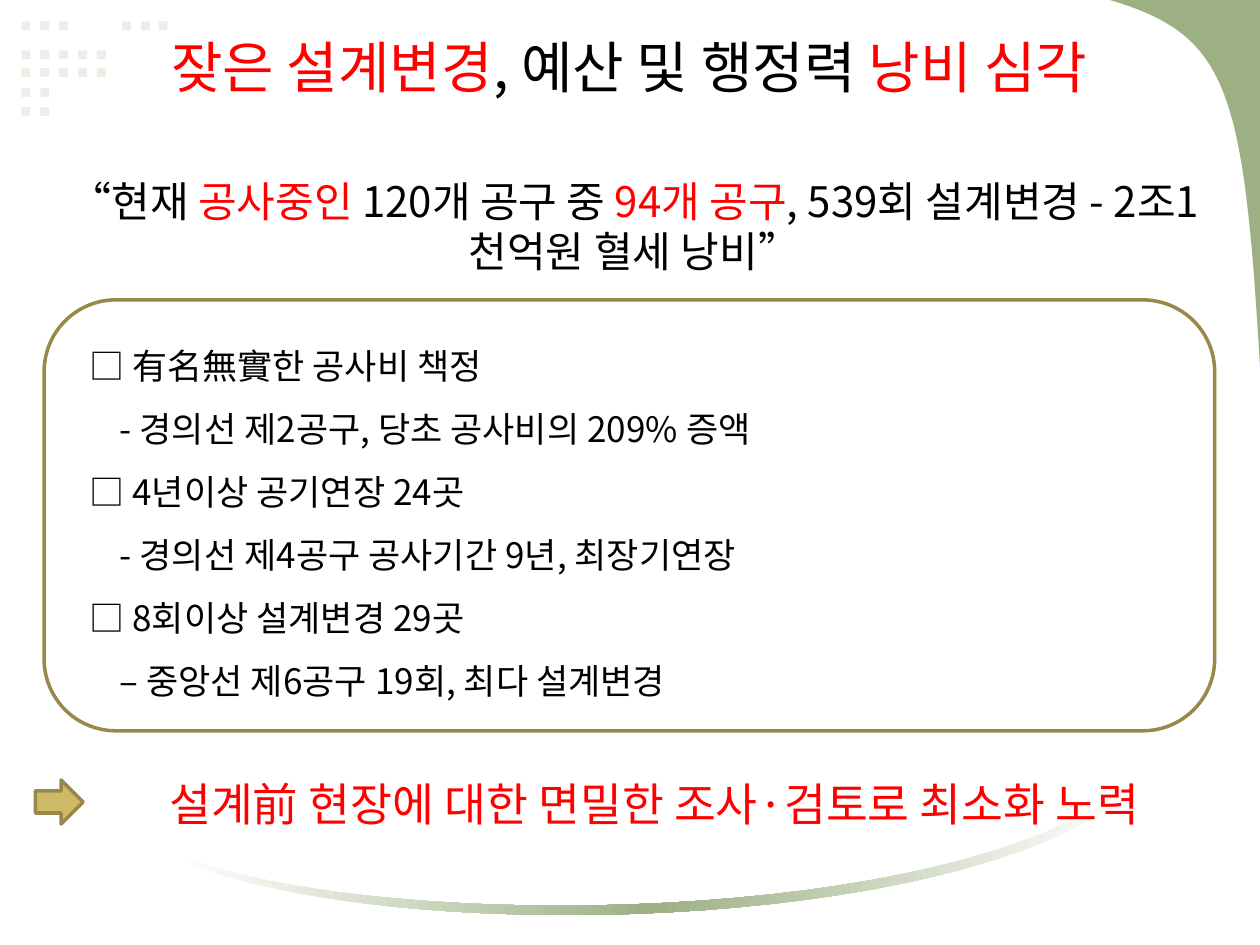
from copy import deepcopy

from lxml.etree import SubElement
from pptx import Presentation
from pptx.dml.color import RGBColor
from pptx.enum.shapes import MSO_SHAPE as Preset
from pptx.enum.text import MSO_ANCHOR as Anchor, MSO_AUTO_SIZE as AutoSize, PP_ALIGN as Align
from pptx.oxml.ns import qn
from pptx.util import Inches, Pt

FONT = "Noto Sans CJK KR"
BLACK, RED, WHITE = "000000", "FF0000", "FFFFFF"
GREEN, PALE, GOLD, BRONZE = "9CB084", "EBEFE6", "CEB966", "98894B"
COLUMNS, ROWS = 100, 75
CELL = Inches(0.1)
CURVE_STEPS = 32
DOT_COLUMNS = (1.7, 3.2, 4.7, 6.2, 7.7, 9.7, 11.2, 12.6)
DOT_ROWS = {1.7: (0, 1, 2, 5, 6, 7), 4: range(5), 5.4: range(5), 7: range(2), 8.5: range(2)}
TITLE = [("잦은 설계변경", RED), (", 예산 및 행정력 ", BLACK), ("낭비 심각", RED)]
QUOTE = [("“현재 ", BLACK), ("공사중인 ", RED), ("120개 공구 중 ", BLACK),
         ("94개 공구", RED), (", 539회 설계변경 - 2조1천억원 혈세 낭비”", BLACK)]
FINDINGS = [
    ("□ 有名無實한 공사비 책정", "- 경의선 제2공구, 당초 공사비의 209% 증액"),
    ("□ 4년이상 공기연장 24곳", "- 경의선 제4공구 공사기간 9년, 최장기연장"),
    ("□ 8회이상 설계변경 29곳", "– 중앙선 제6공구 19회, 최다 설계변경"),
]
CONCLUSION = [("설계前 현장에 대한 면밀한 조사·검토로 최소화 노력", RED)]


def cells(*values):
    """Convert grid cells to slide lengths."""
    return [round(value * CELL) for value in values]


def color(value):
    """Turn a hex string into a colour."""
    return RGBColor.from_string(value)


def apply(target, formats):
    """Set each named attribute on the target."""
    for name, value in formats.items():
        setattr(target, name, value)


def paint(shape, fill=None, line=None):
    """Give a shape a flat fill and outline without a shadow."""
    shape.shadow.inherit = False
    if fill:
        shape.fill.solid()
        shape.fill.fore_color.rgb = color(fill)
    else:
        shape.fill.background()
    if line:
        shape.line.color.rgb = color(line)
        shape.line.width = Pt(2)
    else:
        shape.line.fill.background()


def add_preset(slide, preset, place, fill=None, line=None):
    """Add a painted preset shape."""
    paint(slide.shapes.add_shape(preset, *cells(*place)), fill, line)


def curve(*controls):
    """Sample a cubic curve through its four control points."""
    def point(t):
        weights = ((1 - t) ** 3, 3 * t * (1 - t) ** 2, 3 * t ** 2 * (1 - t), t ** 3)
        return [sum(w * value for w, value in zip(weights, axis)) for axis in zip(*controls)]
    return [point(step / CURVE_STEPS) for step in range(CURVE_STEPS + 1)]


def add_outline(slide, points):
    """Add a closed green freeform."""
    start, *rest = [cells(*point) for point in points]
    builder = slide.shapes.build_freeform(*start)
    builder.add_line_segments(rest, close=True)
    shape = builder.convert_to_shape()
    paint(shape, GREEN)
    return shape


def fade_ends(shape):
    """Fade a shape's fill to white on the left and right."""
    shape.fill.gradient()
    shape.fill.gradient_angle = 0
    stop_list = shape._element.spPr.find(f".//{qn('a:gsLst')}")
    stop_list.append(deepcopy(stop_list[0]))
    for stop, (position, value) in zip(shape.fill.gradient_stops, ((0, WHITE), (0.5, GREEN), (1, WHITE))):
        stop.position = position
        stop.color.rgb = color(value)


def add_decoration(slide):
    """Draw the dots, the corner and the arc of the background."""
    for top, columns in DOT_ROWS.items():
        for column in columns:
            add_preset(slide, Preset.RECTANGLE, (DOT_COLUMNS[column], top, 0.7, 0.7), PALE)
    corner = curve((88.1, 0), (97.5, 2.8), (98.7, 7), (COLUMNS, 29.1))
    add_outline(slide, [*corner, (COLUMNS, 0)])
    lower = curve((89.2, 63.2), (76, 74), (30.7, 75.3), (14.2, 68.2))
    upper = curve((89.2, 62.5), (76, 73.3), (30.7, 74.3), (14.2, 67.9))
    fade_ends(add_outline(slide, lower + upper[::-1]))


def prepare_frame(shape, place):
    """Move a text shape and return its wrapped frame."""
    apply(shape, dict(zip(("left", "top", "width", "height"), cells(*place))))
    frame = shape.text_frame
    apply(frame, {"word_wrap": True, "auto_size": AutoSize.NONE, "vertical_anchor": Anchor.TOP})
    return frame


def write(paragraph, parts, size, **formats):
    """Write coloured runs into a paragraph."""
    apply(paragraph, {"space_before": Pt(0), **formats})
    for text, value in parts:
        run = paragraph.add_run()
        run.text = text
        apply(run.font, {"name": FONT, "size": Pt(size)})
        run.font.color.rgb = color(value)
        SubElement(run.font._element, qn("a:ea"), typeface=FONT)


def add_line(slide, place, parts, size):
    """Add a centred text box."""
    frame = prepare_frame(slide.shapes.add_textbox(0, 0, CELL, CELL), place)
    write(frame.paragraphs[0], parts, size, alignment=Align.CENTER)


def fill_findings(body):
    """Write the findings, each with its indented detail."""
    frame = prepare_frame(body, (6.1, 25.2, 86.5, 31.3))
    for index, text in enumerate(text for pair in FINDINGS for text in pair):
        paragraph = frame.add_paragraph() if index else frame.paragraphs[0]
        write(paragraph, [(text, BLACK)], 20, line_spacing=1.5, alignment=Align.LEFT)
        properties = paragraph._p.get_or_add_pPr()
        properties.set("marL", str(cells(2.4 * (index % 2))[0]))
        properties.set("indent", "0")
        SubElement(properties, qn("a:buNone"))


def main():
    """Build and save the slide."""
    presentation = Presentation()
    apply(presentation, {"slide_width": COLUMNS * CELL, "slide_height": ROWS * CELL})
    slide = presentation.slides.add_slide(presentation.slide_layouts[1])
    add_decoration(slide)
    title = prepare_frame(slide.shapes.title, (2.3, 2.1, 95.3, 6.4))
    write(title.paragraphs[0], TITLE, 32, alignment=Align.CENTER)
    add_line(slide, (2.1, 13.4, 96.5, 9.1), QUOTE, 24)
    fill_findings(slide.placeholders[1])
    add_preset(slide, Preset.ROUNDED_RECTANGLE, (3.5, 23.8, 92.9, 34.2), line=BRONZE)
    add_line(slide, (3.9, 61.1, 96.1, 5.4), CONCLUSION, 26)
    add_preset(slide, Preset.RIGHT_ARROW, (2.8, 61.9, 3.8, 3.5), GOLD, BRONZE)
    presentation.save("out.pptx")


if __name__ == "__main__":
    main()
